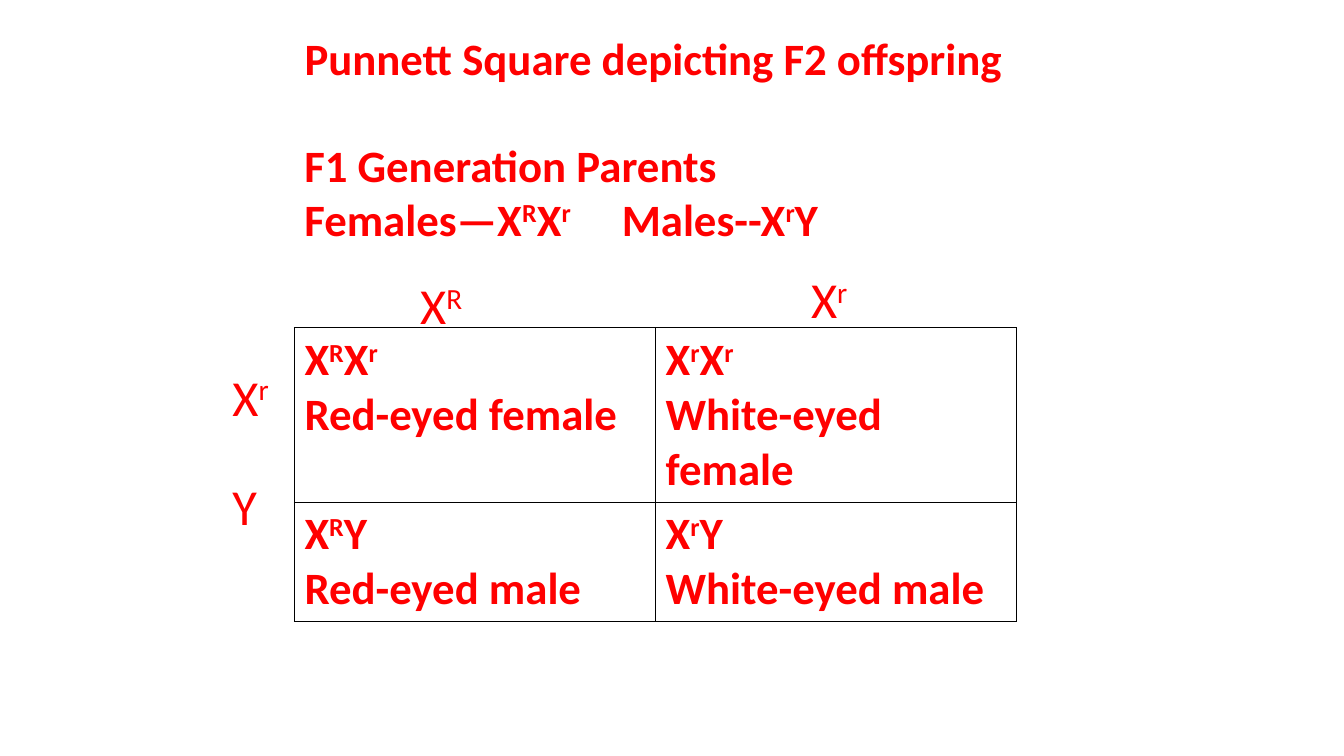
"""Build a Punnett square slide of the F2 offspring of an eye-colour cross."""
from lxml.etree import SubElement
from pptx import Presentation
from pptx.dml.color import RGBColor
from pptx.enum.text import MSO_ANCHOR, MSO_AUTO_SIZE, PP_ALIGN
from pptx.oxml.ns import qn
from pptx.util import Cm, Pt

COLORS = {"text": "FF0000", "border": "000000", "cell": "FFFFFF"}
HEADING = {"name": "Calibri", "size": Pt(32), "bold": True}
ALLELE = {"name": "Calibri", "size": Pt(36), "bold": False}
FRAME = {"word_wrap": True, "auto_size": MSO_AUTO_SIZE.NONE,
         "vertical_anchor": MSO_ANCHOR.TOP}

TITLE = "Punnett Square depicting F2 offspring"
PARENTS = ["F1 Generation Parents", "Females—X^RX^r\tMales--X^rY"]
MALES_TAB = Cm(8)
OFFSPRING = [
    [["X^RX^r", "Red-eyed female"], ["X^rX^r", "White-eyed female"]],
    [["X^RY", "Red-eyed male"], ["X^rY", "White-eyed male"]],
]
GAMETES = [("X^R", 10.34, 6.78), ("X^r", 20.19, 6.63),
           ("X^r", 5.61, 9.09), ("Y", 5.61, 11.86)]


def apply_format(target, values):
    """Set each attribute named in a dict of format values."""
    for attribute, value in values.items():
        setattr(target, attribute, value)


def add_run(paragraph, text, style, raised=False):
    """Add a formatted run, as superscript when raised."""
    run = paragraph.add_run()
    run.text = text
    apply_format(run.font, style)
    run.font.color.rgb = RGBColor.from_string(COLORS["text"])
    if raised:
        run.font._element.set("baseline", "30000")


def write_line(paragraph, line, style):
    """Write a line in which the letter after each caret is superscript."""
    paragraph.alignment = PP_ALIGN.LEFT
    base, *raised_parts = line.split("^")
    add_run(paragraph, base, style)
    for part in raised_parts:
        add_run(paragraph, part[0], style, raised=True)
        if part[1:]:
            add_run(paragraph, part[1:], style)


def write_lines(frame, lines, style):
    """Fill a text frame with one paragraph per line."""
    for index, line in enumerate(lines):
        paragraph = frame.add_paragraph() if index else frame.paragraphs[0]
        write_line(paragraph, line, style)


def add_tab_stop(paragraph, position):
    """Give a paragraph one left tab stop."""
    tabs = SubElement(paragraph._p.get_or_add_pPr(), qn("a:tabLst"))
    SubElement(tabs, qn("a:tab"), pos=str(position), algn="l")


def place_title(slide):
    """Move and fill the title placeholder."""
    title = slide.shapes.title
    apply_format(title, {"left": Cm(7.42), "top": Cm(0.64),
                         "width": Cm(19.05), "height": Cm(1.63)})
    apply_format(title.text_frame, FRAME)
    write_lines(title.text_frame, [TITLE], HEADING)


def add_text(slide, lines, style, left, top, width, height):
    """Add a text box and return its text frame."""
    box = slide.shapes.add_textbox(Cm(left), Cm(top), Cm(width), Cm(height))
    apply_format(box.text_frame, FRAME)
    write_lines(box.text_frame, lines, style)
    return box.text_frame


def outline_cell(cell):
    """Draw a thin border on all four sides of a cell."""
    properties = cell._tc.get_or_add_tcPr()
    for side in ("a:lnL", "a:lnR", "a:lnT", "a:lnB"):
        border = SubElement(properties, qn(side), w=str(Pt(1)))
        fill = SubElement(border, qn("a:solidFill"))
        SubElement(fill, qn("a:srgbClr"), val=COLORS["border"])


def add_punnett_square(slide):
    """Add the table of offspring genotypes and phenotypes."""
    square = slide.shapes.add_table(
        2, 2, Cm(7.42), Cm(8.26), Cm(18.2), Cm(5.44)).table
    apply_format(square, {"first_row": False, "horz_banding": False})
    for row, offspring_row in enumerate(OFFSPRING):
        for column, offspring in enumerate(offspring_row):
            cell = square.cell(row, column)
            outline_cell(cell)
            cell.fill.solid()
            cell.fill.fore_color.rgb = RGBColor.from_string(COLORS["cell"])
            write_lines(cell.text_frame, offspring, HEADING)


def main():
    """Assemble and save the slide."""
    deck = Presentation()
    apply_format(deck, {"slide_width": Cm(33.87), "slide_height": Cm(19.05)})
    slide = deck.slides.add_slide(deck.slide_layouts.get_by_name("Title Only"))
    place_title(slide)
    add_punnett_square(slide)
    parents = add_text(slide, PARENTS, HEADING, 7.42, 3.35, 19.05, 2.97)
    add_tab_stop(parents.paragraphs[1], MALES_TAB)
    for gamete, left, top in GAMETES:
        add_text(slide, [gamete], ALLELE, left, top, 3.6, 1.8)
    deck.save("out.pptx")


if __name__ == "__main__":
    main()
